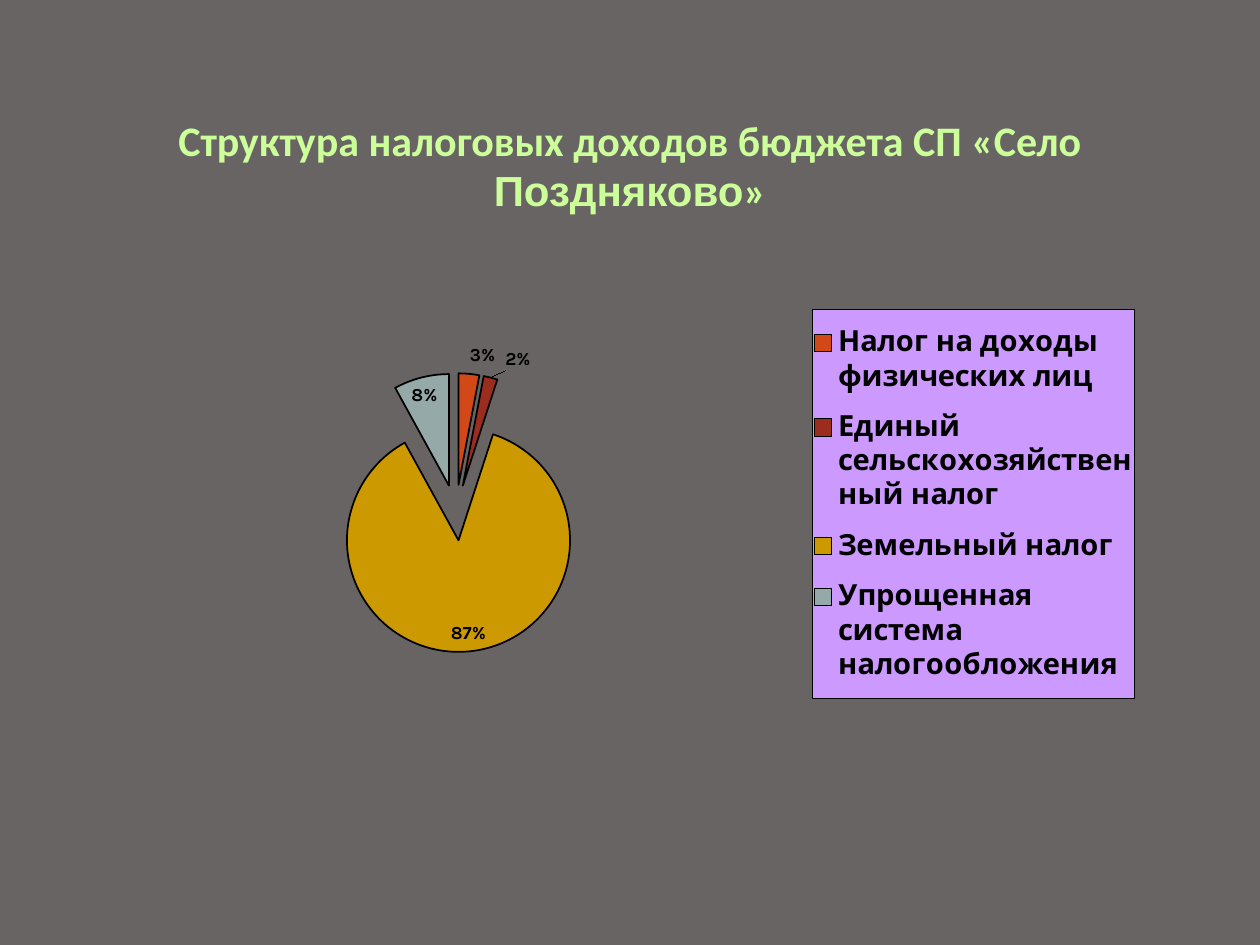
from lxml.etree import SubElement
from pptx import Presentation
from pptx.chart.data import CategoryChartData as Data
from pptx.dml.color import RGBColor
from pptx.enum.chart import XL_CHART_TYPE as Kind, XL_LABEL_POSITION as Spot, XL_LEGEND_POSITION as Side
from pptx.enum.text import MSO_ANCHOR as Anchor, PP_ALIGN as Align
from pptx.oxml import parse_xml
from pptx.oxml.ns import nsdecls, qn
from pptx.util import Pt

GRAY = RGBColor(0x69, 0x64, 0x64)
LIME = RGBColor(0xCC, 0xFF, 0x99)
BLACK = RGBColor(0, 0, 0)
TAXES = [
    ("Налог на доходы физических лиц", 3, RGBColor(0xD3, 0x48, 0x17)),
    ("Единый сельскохозяйственный налог", 2, RGBColor(0x9B, 0x2D, 0x1F)),
    ("Земельный налог", 87, RGBColor(0xCC, 0x99, 0x00)),
    ("Упрощенная система налогообложения", 8, RGBColor(0x96, 0xA9, 0xA9)),
]


def style(font, size, name="Karla", color=BLACK):
    """Set a bold font."""
    font.size, font.name, font.bold = Pt(size), name, True
    font.color.rgb = color


def write(para, text, **look):
    """Add a formatted run of text."""
    run = para.add_run()
    run.text = text
    style(run.font, **look)


def layout(x, y, w, h, inner=False):
    """Make a manual layout from fractions of the chart."""
    node = parse_xml(f"<c:layout {nsdecls('c')}/>")
    box = SubElement(node, qn("c:manualLayout"))
    parts = [("layoutTarget", "inner")] if inner else []
    parts += [("xMode", "edge"), ("yMode", "edge"), ("x", x), ("y", y), ("w", w), ("h", h)]
    for tag, val in parts:
        SubElement(box, qn(f"c:{tag}")).set("val", str(val))
    return node


def add_title(slide):
    """Fill and place the title."""
    title = slide.shapes.title
    title.left, title.top, title.width, title.height = Pt(36), Pt(65.5), Pt(648), Pt(57)
    title.text_frame.vertical_anchor = Anchor.MIDDLE
    para = title.text_frame.paragraphs[0]
    para.alignment = Align.CENTER
    for text, name in (
        ("Структура налоговых доходов бюджета СП «Село ", "Calibri"),
        ("Поздняково", "Arial"),
        ("»", "Calibri"),
    ):
        write(para, text, size=24, name=name, color=LIME)


def add_key(chart):
    """Add the filled legend on the right."""
    chart.has_legend = True
    key = chart.legend
    key.position = Side.RIGHT
    key.include_in_layout = False
    style(key.font, 16.6)
    root = chart.element.find(".//" + qn("c:legend"))
    for old in root.findall(qn("c:layout")):
        root.remove(old)
    root.find(qn("c:legendPos")).addnext(layout(0.67, 0.15, 0.28, 0.67))
    root.find(qn("c:overlay")).addnext(parse_xml(
        f"<c:spPr {nsdecls('c', 'a')}>"
        '<a:solidFill><a:srgbClr val="CC99FF"/></a:solidFill>'
        '<a:ln w="3175"><a:solidFill><a:srgbClr val="000000"/></a:solidFill></a:ln>'
        "</c:spPr>"))


def paint(form, color):
    """Fill a slice and outline it in black."""
    form.fill.solid()
    form.fill.fore_color.rgb = color
    form.line.color.rgb = BLACK
    form.line.width = Pt(1)


def add_pie(slide):
    """Add the exploded pie of taxes."""
    data = Data()
    data.categories = [name for name, _, _ in TAXES]
    data.add_series("Series 1", [val for _, val, _ in TAXES])
    chart = slide.shapes.add_chart(
        Kind.PIE, Pt(24), Pt(127), Pt(657), Pt(332), data).chart
    chart.has_title = False
    style(chart.font, 18)
    add_key(chart)

    area = chart.element.find(".//" + qn("c:plotArea"))
    for old in area.findall(qn("c:layout")):
        area.remove(old)
    area.insert(0, layout(0.05, 0.26, 0.62, 0.48, inner=True))

    plot = chart.plots[0]
    plot.vary_by_categories = True
    pie = plot.series[0]
    paint(pie.format, TAXES[0][2])
    burst = parse_xml(f"<c:explosion {nsdecls('c')} val=\"25\"/>")
    area.find(".//" + qn("c:ser")).find(qn("c:spPr")).addnext(burst)
    for i, (_, _, color) in enumerate(TAXES):
        paint(pie.points[i].format, color)

    labels = pie.data_labels
    labels.show_value = False
    labels.show_percentage = True
    labels.number_format = "0%"
    labels.number_format_is_linked = False
    labels.position = Spot.BEST_FIT
    style(labels.font, 10.5)


def main():
    """Build and save the slide."""
    deck = Presentation()
    deck.slide_width, deck.slide_height = Pt(720), Pt(540)
    slide = deck.slides.add_slide(deck.slide_layouts[5])
    slide.background.fill.solid()
    slide.background.fill.fore_color.rgb = GRAY
    add_title(slide)
    add_pie(slide)
    deck.save("out.pptx")


if __name__ == "__main__":
    main()
